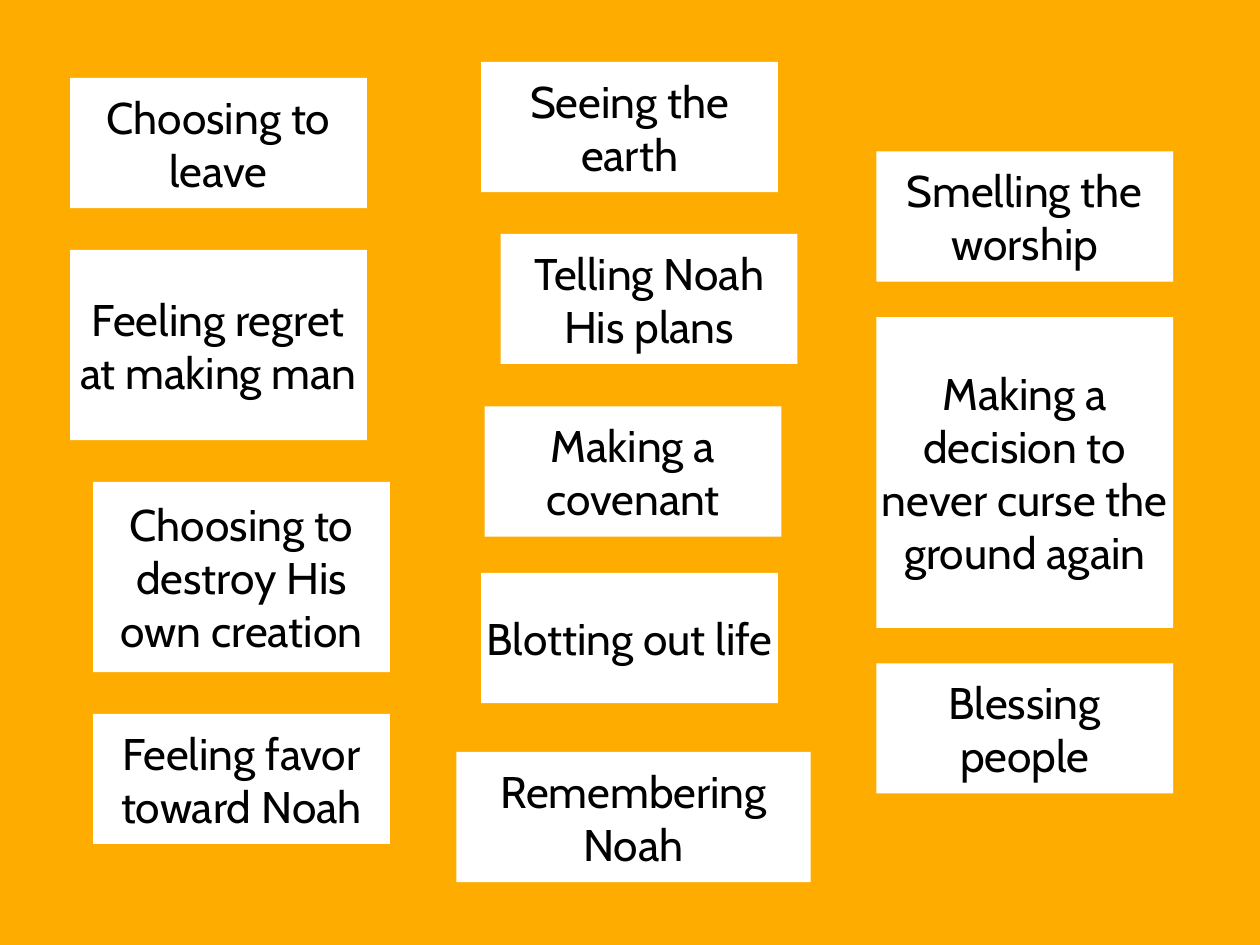
from pptx import Presentation
from pptx.dml.color import RGBColor
from pptx.enum.shapes import MSO_SHAPE as Shape
from pptx.enum.text import MSO_ANCHOR as Anchor, PP_ALIGN as Align
from pptx.util import Emu, Pt

EMU_PER_PX = 9144  # 100 px to the inch
SLIDE_WIDTH, SLIDE_HEIGHT = 1422, 1067
CARD_WIDTH, WIDE_CARD = 335, 400
TWO_LINES, THREE_LINES, FIVE_LINES = 147, 215, 351
INSET = 6
FONT, FONT_SIZE = "Cabin", 36

ORANGE = RGBColor(0xFE, 0xAD, 0x00)
WHITE = RGBColor(0xFF, 0xFF, 0xFF)
BLACK = RGBColor(0x00, 0x00, 0x00)

# left, top, width, height, text
CARDS = [
    (79, 88, CARD_WIDTH, TWO_LINES, "Choosing to leave"),
    (79, 282, CARD_WIDTH, THREE_LINES, "Feeling regret at making man"),
    (105, 544, CARD_WIDTH, THREE_LINES, "Choosing to destroy His own creation"),
    (105, 806, CARD_WIDTH, TWO_LINES, "Feeling favor toward Noah"),
    (543, 70, CARD_WIDTH, TWO_LINES, "Seeing the earth"),
    (565, 264, CARD_WIDTH, TWO_LINES, "Telling Noah His plans"),
    (547, 459, CARD_WIDTH, TWO_LINES, "Making a covenant"),
    (543, 647, CARD_WIDTH, TWO_LINES, "Blotting out life"),
    (515, 849, WIDE_CARD, TWO_LINES, "Remembering Noah"),
    (989, 171, CARD_WIDTH, TWO_LINES, "Smelling the worship"),
    (989, 358, CARD_WIDTH, FIVE_LINES,
     "Making a decision to never curse the ground again"),
    (989, 749, CARD_WIDTH, TWO_LINES, "Blessing people"),
]


def px(length):
    return Emu(length * EMU_PER_PX)


def add_rectangle(page, left, top, width, height, color):
    box = page.shapes.add_shape(
        Shape.RECTANGLE, px(left), px(top), px(width), px(height))
    box.shadow.inherit = False
    box.fill.solid()
    box.fill.fore_color.rgb = color
    box.line.fill.background()
    return box


def add_card(page, left, top, width, height, text):
    """Add a white card with its text centred both ways."""
    box = add_rectangle(page, left, top, width, height, WHITE)
    frame = box.text_frame
    frame.word_wrap = True
    frame.vertical_anchor = Anchor.MIDDLE
    frame.margin_left = frame.margin_right = px(INSET)
    frame.margin_top = frame.margin_bottom = px(INSET)
    para = frame.paragraphs[0]
    para.alignment = Align.CENTER
    span = para.add_run()
    span.text = text
    span.font.name = FONT
    span.font.size = Pt(FONT_SIZE)
    span.font.color.rgb = BLACK


def main():
    deck = Presentation()
    deck.slide_width, deck.slide_height = px(SLIDE_WIDTH), px(SLIDE_HEIGHT)
    page = deck.slides.add_slide(deck.slide_layouts[6])
    add_rectangle(page, -32, -30, 1596, 1201, ORANGE)
    for card in CARDS:
        add_card(page, *card)
    deck.save("out.pptx")


if __name__ == "__main__":
    main()
